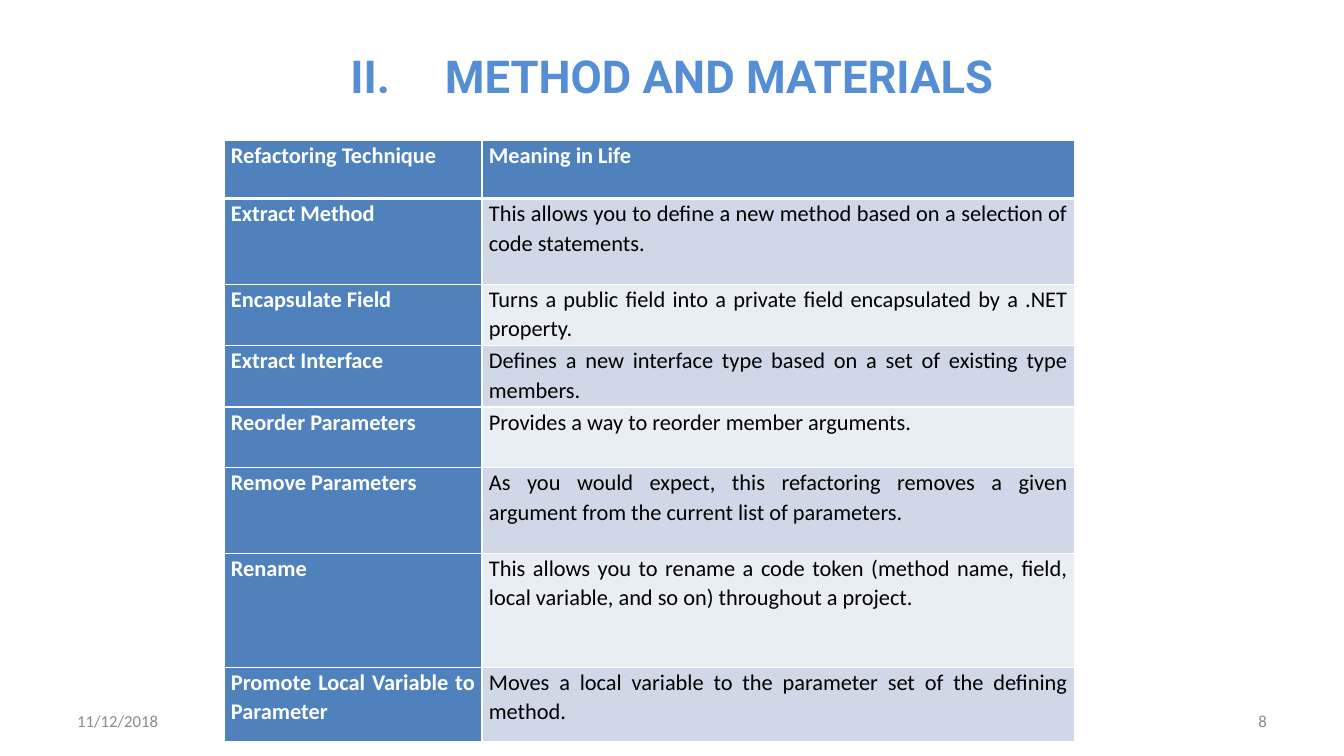
from lxml.etree import SubElement as Sub
from pptx import Presentation
from pptx.dml.color import RGBColor
from pptx.enum.text import MSO_ANCHOR as Anchor, PP_ALIGN as Align
from pptx.oxml.ns import qn
from pptx.util import Pt

TITLE = "METHOD AND MATERIALS"
HEAD = ("Refactoring Technique", "Meaning in Life")
ROWS = [
    ("Extract Method", "This allows you to define a new method based on a selection of code statements."),
    ("Encapsulate Field", "Turns a public field into a private field encapsulated by a .NET property."),
    ("Extract Interface", "Defines a new interface type based on a set of existing type members."),
    ("Reorder Parameters", "Provides a way to reorder member arguments."),
    ("Remove Parameters", "As you would expect, this refactoring removes a given argument from the current list of parameters."),
    ("Rename", "This allows you to rename a code token (method name, field, local variable, and so on) throughout a project."),
    ("Promote Local Variable to Parameter", "Moves a local variable to the parameter set of the defining method."),
]
HIGH = (41.8, 61.2, 43.9, 43.9, 43.2, 61.2, 81.4, 53.3)
WIDE = (184.3, 423.4)
FOOT = [("11/12/2018", 48, Align.LEFT), ("8", 688, Align.RIGHT)]
BLUE, WHITE, BLACK, GREY = "4F81BD", "FFFFFF", "000000", "8C8C8C"
BANDS = ("D0D8E8", "E9EDF4")


def color(code):
    return RGBColor.from_string(code)


def style(para, size, code, align, bold=False, face="Calibri"):
    para.alignment = align
    for run in para.runs:
        font = run.font
        font.name, font.size, font.bold = face, Pt(size), bold
        font.color.rgb = color(code)


def edge(cell, side, width):
    line = Sub(cell._tc.get_or_add_tcPr(), qn("a:ln" + side), w=str(Pt(width)))
    fill = Sub(line, qn("a:solidFill"))
    Sub(fill, qn("a:srgbClr"), val=WHITE)


def paint(cell, text, row, col):
    dark = row == 0 or col == 0
    for side in "LRTB":
        thick = (side == "B" and row == 0) or (side == "T" and row == 1)
        edge(cell, side, 3 if thick else 1)
    cell.fill.solid()
    cell.fill.fore_color.rgb = color(BLUE if dark else BANDS[(row - 1) % 2])
    cell.margin_left = cell.margin_right = Pt(5)
    cell.margin_top = cell.margin_bottom = 0
    cell.vertical_anchor = Anchor.TOP
    para = cell.text_frame.paragraphs[0]
    para.text = text
    para.line_spacing = 1.07
    style(para, 16, WHITE if dark else BLACK, Align.JUSTIFY, dark)


def add_title(slide):
    box = slide.shapes.title
    box.left, box.top, box.width, box.height = Pt(48), Pt(9), Pt(864), Pt(90)
    frame = box.text_frame
    frame.text = TITLE
    frame.vertical_anchor = Anchor.MIDDLE
    para = frame.paragraphs[0]
    props = para._p.get_or_add_pPr()
    props.set("marL", str(Pt(67.5)))
    props.set("indent", str(Pt(-67.5)))
    Sub(props, qn("a:buFont"), typeface="+mj-lt")
    Sub(props, qn("a:buAutoNum"), type="romanUcPeriod", startAt="2")
    para.space_before = Pt(0)
    style(para, 32.4, "558ED5", Align.CENTER, True, "Roboto")


def add_grid(slide):
    data = [HEAD] + ROWS
    grid = slide.shapes.add_table(len(data), len(HEAD), Pt(160), Pt(100),
                                  Pt(sum(WIDE)), Pt(sum(HIGH))).table
    for col, width in zip(grid.columns, WIDE):
        col.width = Pt(width)
    for row, high in zip(grid.rows, HIGH):
        row.height = Pt(high)
    for r, line in enumerate(data):
        for c, text in enumerate(line):
            paint(grid.cell(r, c), text, r, c)


def add_foot(slide):
    for text, left, align in FOOT:
        frame = slide.shapes.add_textbox(Pt(left), Pt(500.5), Pt(224), Pt(28.8)).text_frame
        frame.word_wrap = True
        frame.vertical_anchor = Anchor.MIDDLE
        frame.text = text
        style(frame.paragraphs[0], 12, GREY, align)


def main():
    deck = Presentation()
    deck.slide_width, deck.slide_height = Pt(960), Pt(540)
    slide = deck.slides.add_slide(deck.slide_layouts[5])
    add_title(slide)
    add_grid(slide)
    add_foot(slide)
    deck.save("out.pptx")


if __name__ == "__main__":
    main()
